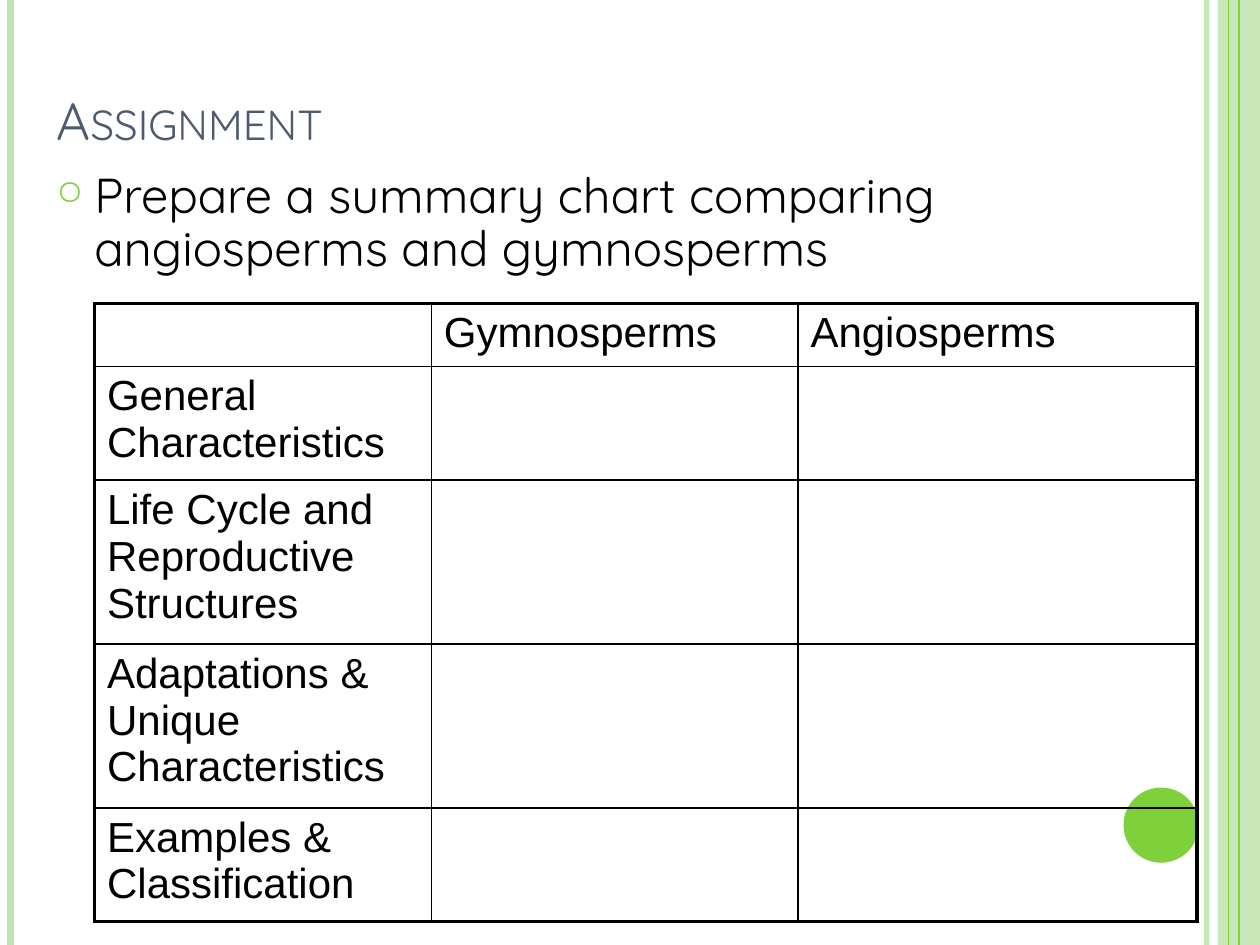
from pptx import Presentation
from pptx.util import Pt
from pptx.dml.color import RGBColor
from pptx.enum.shapes import MSO_SHAPE, MSO_CONNECTOR
from pptx.enum.text import MSO_ANCHOR, PP_ALIGN
from pptx.oxml.ns import qn
from lxml.etree import SubElement


def paint(part, color, alpha=100):
    part.solid()
    part.fore_color.rgb = RGBColor.from_string(color)
    if alpha < 100:
        tint = part._xPr.find(qn("a:solidFill"))[0]
        SubElement(tint, qn("a:alpha"), val=str(alpha * 1000))


def write(par, text, font, size, color):
    run = par.add_run()
    run.text = text
    run.font.name = font
    run.font.size = Pt(size)
    paint(run.font.fill, color)
    return run


GREEN, PALE, BLACK = "7FD13B", "C0E5AF", "000000"

prs = Presentation()
prs.slide_width, prs.slide_height = Pt(720), Pt(540)
slide = prs.slides.add_slide(prs.slide_layouts[5])
shapes = slide.shapes

# Side band and round badge
for kind, box, color, alpha in [
    (MSO_SHAPE.RECTANGLE, (696, 0, 24, 540), PALE, 87),
    (MSO_SHAPE.OVAL, (642, 450, 43, 43), GREEN, 100),
]:
    shape = shapes.add_shape(kind, *map(Pt, box))
    shape.shadow.inherit = False
    paint(shape.fill, color, alpha)
    shape.line.fill.background()

# Vertical rules
for x, width, color, alpha in [
    (689.5, 3, PALE, 93),
    (6, 4.5, PALE, 100),
    (708, 1.5, GREEN, 100),
    (702, 0.75, GREEN, 100),
]:
    rule = shapes.add_connector(MSO_CONNECTOR.STRAIGHT, Pt(x), 0, Pt(x), Pt(540))
    rule.line.width = Pt(width)
    paint(rule.line.fill, color, alpha)
    SubElement(rule._element.spPr, qn("a:effectLst"))

# Title
title = shapes.title
title.left, title.top, title.width, title.height = map(Pt, (25.2, 0, 648, 90))
frame = title.text_frame
frame.vertical_anchor = MSO_ANCHOR.BOTTOM
par = frame.paragraphs[0]
par.alignment = PP_ALIGN.LEFT
run = write(par, "Assignment", "Quicksand", 30, "4E5B6F")
run.font._element.set("cap", "small")

# Task with a ring bullet
task = shapes.add_textbox(*map(Pt, (25.2, 94.3, 657.4, 73.4)))
task.text_frame.word_wrap = True
par = task.text_frame.paragraphs[0]
par.line_spacing = 0.9
par.space_before = Pt(6)
props = par._p.get_or_add_pPr()
props.set("marL", str(Pt(21.6)))
props.set("indent", str(-Pt(21.6)))
tint = SubElement(props, qn("a:buClr"))
SubElement(tint, qn("a:srgbClr"), val=GREEN)
SubElement(props, qn("a:buSzPct"), val="70000")
SubElement(props, qn("a:buChar"), char="○")
write(par, "Prepare a summary chart comparing angiosperms and gymnosperms",
      "Quicksand", 28, BLACK)

# Comparison table
rows = [
    ("", "Gymnosperms", "Angiosperms"),
    ("General Characteristics", "", ""),
    ("Life Cycle and Reproductive Structures", "", ""),
    ("Adaptations & Unique Characteristics", "", ""),
    ("Examples & Classification", "", ""),
]
highs = [33.7, 60.6, 87.5, 87.5, 60.6]
wides = [192.5, 209.5, 228]
grid = shapes.add_table(len(rows), len(wides), Pt(54), Pt(173.5),
                        Pt(sum(wides)), Pt(sum(highs))).table
grid.first_row = grid.horz_banding = False
for col, wide in zip(grid.columns, wides):
    col.width = Pt(wide)
for row, high in zip(grid.rows, highs):
    row.height = Pt(high)

for r, texts in enumerate(rows):
    for c, text in enumerate(texts):
        cell = grid.cell(r, c)
        if text:
            write(cell.text_frame.paragraphs[0], text, "Arial", 24, BLACK)
        # Thick outer frame, thin inner lines
        outer = {"lnL": c == 0, "lnR": c == len(wides) - 1,
                 "lnT": r == 0, "lnB": r == len(rows) - 1}
        props = cell._tc.get_or_add_tcPr()
        for side, thick in outer.items():
            edge = SubElement(props, qn("a:" + side), w=str(Pt(2.25 if thick else 1)))
            ink = SubElement(edge, qn("a:solidFill"))
            SubElement(ink, qn("a:srgbClr"), val=BLACK)
        cell.fill.background()

prs.save("out.pptx")
